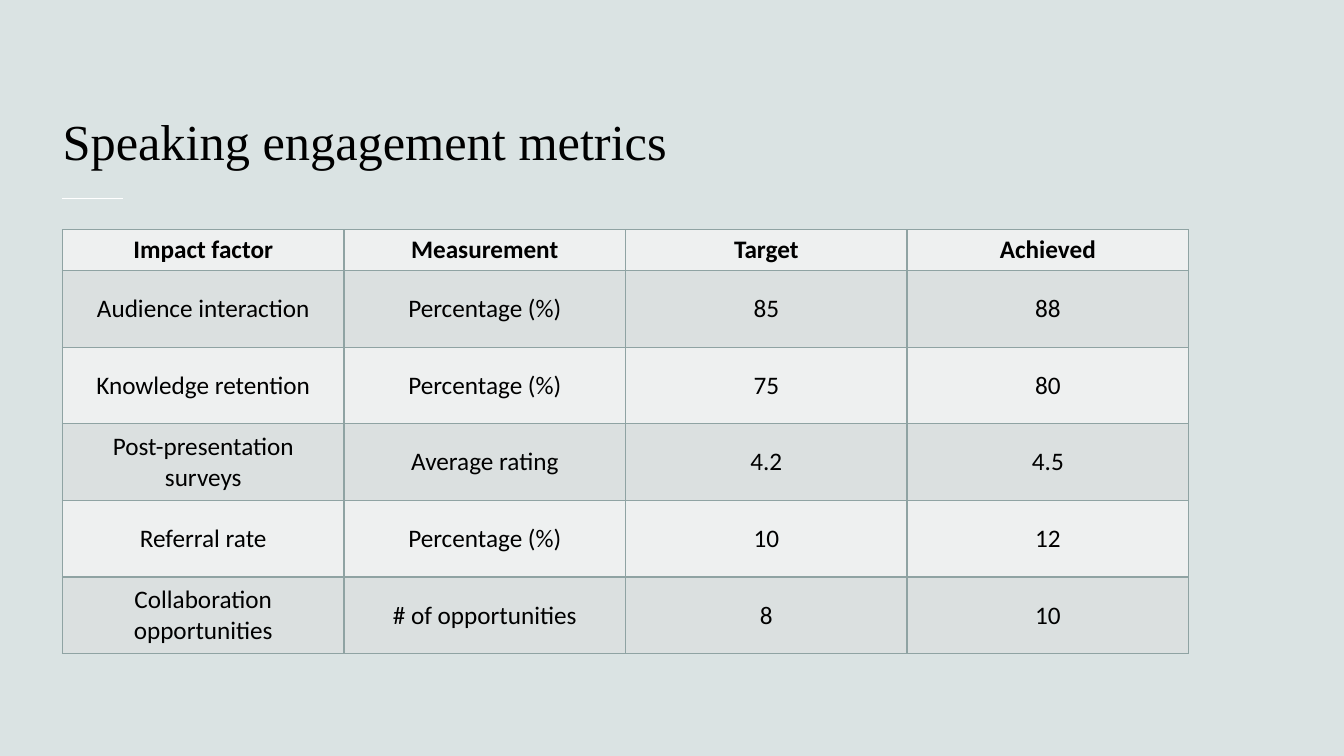
from dataclasses import dataclass

from lxml.etree import SubElement
from pptx import Presentation
from pptx.dml.color import RGBColor as RGB
from pptx.enum.shapes import MSO_CONNECTOR as Connector
from pptx.enum.text import MSO_ANCHOR as Anchor, MSO_AUTO_SIZE as AutoSize, PP_ALIGN as Align
from pptx.oxml.ns import qn
from pptx.util import Inches, Pt

# Content
TITLE = "Speaking engagement metrics"
METRICS = [
    ("Impact factor", "Measurement", "Target", "Achieved"),
    ("Audience interaction", "Percentage (%)", "85", "88"),
    ("Knowledge retention", "Percentage (%)", "75", "80"),
    ("Post-presentation surveys", "Average rating", "4.2", "4.5"),
    ("Referral rate", "Percentage (%)", "10", "12"),
    ("Collaboration opportunities", "# of opportunities", "8", "10"),
]


@dataclass(frozen=True)
class Theme:
    background: str = "DAE3E3"
    rule: str = "FFFFFF"
    text: str = "000000"
    border: str = "8FA3A3"
    bands: tuple = ("EEF0F0", "DBE0E0")
    title_font: str = "Times New Roman"
    body_font: str = "Calibri"
    title_size: int = 36
    body_size: int = 18
    line_width: int = 1


THEME = Theme()

# Layout, in inches
LEFT = 0.62
TITLE_TOP, TITLE_WIDTH, TITLE_HEIGHT = 0.44, 12.08, 1.3
RULE_TOP, RULE_LENGTH = 1.97, 0.6
TABLE_TOP, TABLE_WIDTH = 2.28, 11.17
HEADER_HEIGHT, ROW_HEIGHT = 0.36, 0.76


def style_font(font, name, size, bold=False):
    font.name = name
    font.size = Pt(size)
    font.bold = bold
    font.color.rgb = RGB.from_string(THEME.text)


def add_borders(cell):
    properties = cell._tc.get_or_add_tcPr()
    for side in ("lnL", "lnR", "lnT", "lnB"):
        line = SubElement(properties, qn(f"a:{side}"), w=str(Pt(THEME.line_width)))
        fill = SubElement(line, qn("a:solidFill"))
        SubElement(fill, qn("a:srgbClr"), val=THEME.border)


def add_title(page):
    title = page.shapes.title
    title.left, title.top = Inches(LEFT), Inches(TITLE_TOP)
    title.width, title.height = Inches(TITLE_WIDTH), Inches(TITLE_HEIGHT)
    frame = title.text_frame
    frame.text = TITLE
    frame.word_wrap = True
    frame.auto_size = AutoSize.NONE
    frame.vertical_anchor = Anchor.BOTTOM
    frame.margin_left = 0
    para = frame.paragraphs[0]
    para.alignment = Align.LEFT
    style_font(para.font, THEME.title_font, THEME.title_size)


def add_rule(page):
    rule = page.shapes.add_connector(
        Connector.STRAIGHT, Inches(LEFT), Inches(RULE_TOP),
        Inches(LEFT + RULE_LENGTH), Inches(RULE_TOP))
    rule.line.color.rgb = RGB.from_string(THEME.rule)
    rule.line.width = Pt(THEME.line_width)
    SubElement(rule._element.spPr, qn("a:effectLst"))


def add_metrics(page):
    heights = [HEADER_HEIGHT] + [ROW_HEIGHT] * (len(METRICS) - 1)
    table = page.shapes.add_table(
        len(METRICS), len(METRICS[0]), Inches(LEFT), Inches(TABLE_TOP),
        Inches(TABLE_WIDTH), Inches(sum(heights))).table
    for row_index, (values, height) in enumerate(zip(METRICS, heights)):
        table.rows[row_index].height = Inches(height)
        for column_index, value in enumerate(values):
            cell = table.cell(row_index, column_index)
            cell.text = value
            cell.vertical_anchor = Anchor.MIDDLE
            add_borders(cell)
            cell.fill.solid()
            cell.fill.fore_color.rgb = RGB.from_string(THEME.bands[row_index % 2])
            para = cell.text_frame.paragraphs[0]
            para.alignment = Align.CENTER
            style_font(para.font, THEME.body_font, THEME.body_size, bold=row_index == 0)


def main():
    deck = Presentation()
    deck.slide_width, deck.slide_height = Inches(13.33), Inches(7.5)
    page = deck.slides.add_slide(deck.slide_layouts.get_by_name("Title Only"))
    page.background.fill.solid()
    page.background.fill.fore_color.rgb = RGB.from_string(THEME.background)
    add_rule(page)
    add_title(page)
    add_metrics(page)
    deck.save("out.pptx")


if __name__ == "__main__":
    main()
